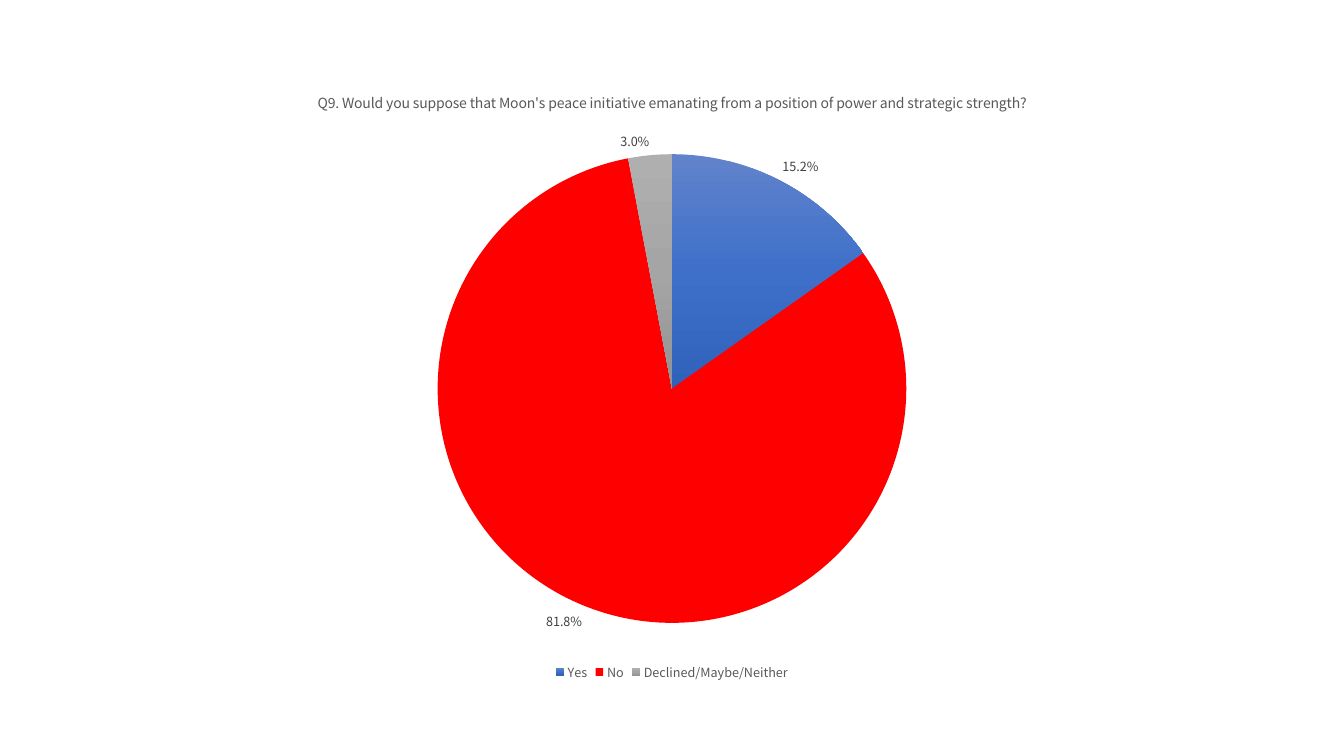
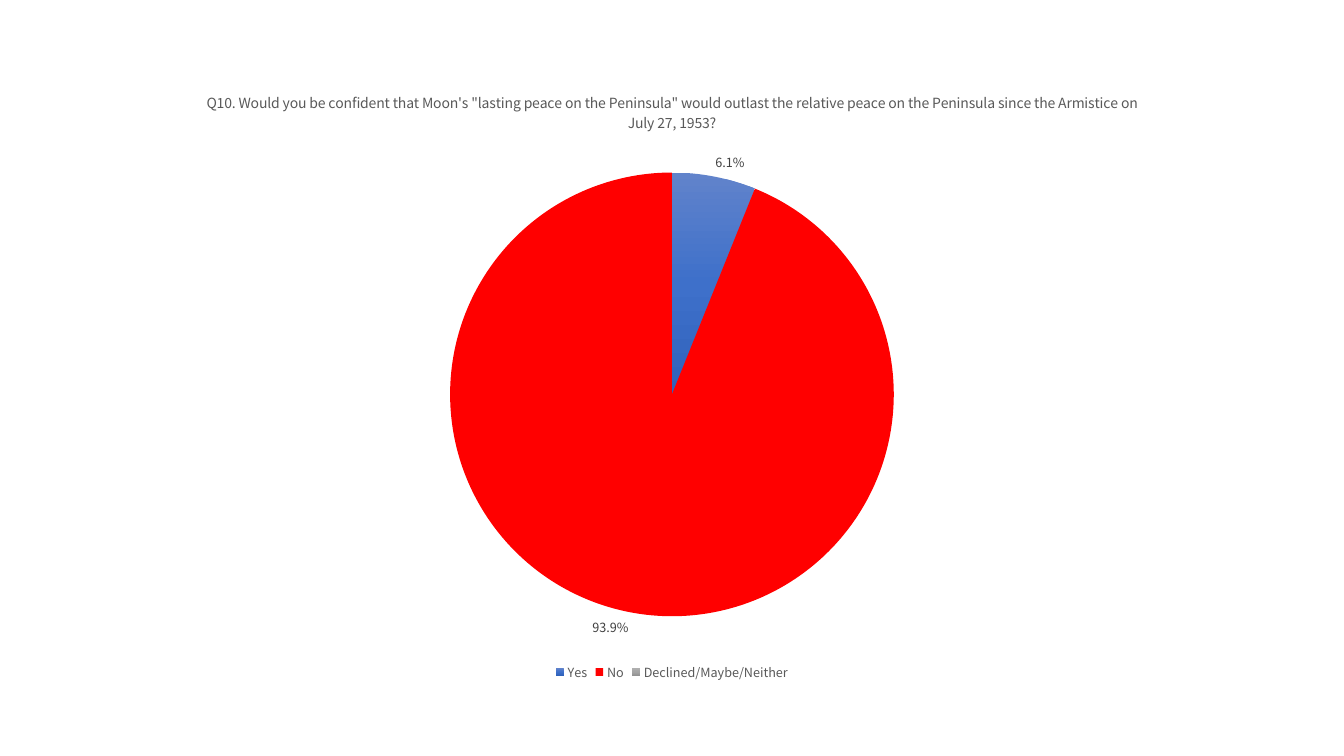
"""Build two survey slides, each with one pie chart."""
from copy import deepcopy
from dataclasses import dataclass

from lxml.etree import Element, SubElement
from pptx import Presentation
from pptx.chart.data import CategoryChartData as Data
from pptx.dml.color import RGBColor as Color
from pptx.enum.chart import XL_CHART_TYPE as Kind
from pptx.enum.chart import XL_LABEL_POSITION as Spot
from pptx.enum.chart import XL_LEGEND_POSITION as Side
from pptx.oxml.ns import qn
from pptx.util import Pt

WIDE, HIGH = 1344, 756
SCALE = 12192000 / WIDE


@dataclass(frozen=True)
class Theme:
    face: str = "Noto Sans CJK KR"
    base: str = "000000"
    text: str = "595959"
    label: str = "404040"
    head: int = 10
    small: int = 9
    fills: tuple = (
        ("6183CB", "3E70CA", "3062BB"),
        ("FF0000",),
        ("AFAFAF", "A5A5A5", "939393"),
    )


def px(num):
    return round(num * SCALE)


def style(font, size, color, face):
    font.size, font.name, font.bold = Pt(size), face, False
    font.color.rgb = Color.from_string(color)


def write(frame, text, **form):
    frame.text = text
    style(frame.paragraphs[0].runs[0].font, **form)


class Deck:
    def __init__(self, theme):
        self.theme = theme
        self.show = Presentation()
        self.show.slide_width, self.show.slide_height = px(WIDE), px(HIGH)
        self.slide = None

    def page(self):
        self.slide = self.show.slides.add_slide(self.show.slide_layouts[6])

    def form(self, size, color):
        return {"size": size, "color": color, "face": self.theme.face}

    def pie(self, title, names, vals, box):
        look = self.theme
        data = Data(number_format="0.0%")
        data.categories = names
        data.add_series(title, vals)
        chart = self.slide.shapes.add_chart(Kind.PIE, *map(px, box), data).chart
        style(chart.font, **self.form(look.head, look.base))
        chart.has_title = True
        write(chart.chart_title.text_frame, title,
              **self.form(look.head, look.text))
        self.legend(chart)
        for num, tones in enumerate(look.fills):
            self.slice(chart, num, tones)
        self.labels(chart, vals)

    def legend(self, chart):
        chart.has_legend = True
        key = chart.legend
        key.position, key.include_in_layout = Side.BOTTOM, False
        style(key.font, **self.form(self.theme.small, self.theme.text))

    def slice(self, chart, num, tones):
        part = chart.plots[0].series[0].points[num].format
        part.line.fill.background()
        fill = part.fill
        if len(tones) == 1:
            fill.solid()
            fill.fore_color.rgb = Color.from_string(tones[0])
            return
        fill.gradient()
        fill.gradient_angle = 270
        stops = chart.element.xpath(f"//c:dPt[c:idx/@val='{num}']//a:gsLst")[0]
        stops.append(deepcopy(stops[0]))
        for step, (stop, tone) in enumerate(zip(fill.gradient_stops, tones)):
            stop.position = step / (len(tones) - 1)
            stop.color.rgb = Color.from_string(tone)

    def labels(self, chart, vals):
        tags = chart.plots[0].series[0].data_labels
        tags.show_value, tags.position = True, Spot.OUTSIDE_END
        tags.number_format, tags.number_format_is_linked = "0.0%", False
        style(tags.font, **self.form(self.theme.small, self.theme.label))
        root = chart.element.xpath("//c:ser/c:dLbls")[0]
        empty = [num for num, val in enumerate(vals) if not val]
        for spot, num in enumerate(empty):
            tag = Element(qn("c:dLbl"))
            SubElement(tag, qn("c:idx"), val=str(num))
            SubElement(tag, qn("c:delete"), val="1")
            root.insert(spot, tag)


def main():
    names = ("Yes", "No", "Declined/Maybe/Neither")
    box = (71, 71, 1202, 614)
    polls = (
        ("Q9. Would you suppose that Moon's peace initiative emanating "
         "from a position of power and strategic strength?",
         (0.152, 0.818, 0.03)),
        ("Q10. Would you be confident that Moon's \"lasting peace on the "
         "Peninsula\" would outlast the relative peace on the Peninsula "
         "since the Armistice on July 27, 1953?",
         (0.061, 0.939, 0)),
    )
    deck = Deck(Theme())
    for title, vals in polls:
        deck.page()
        deck.pie(title, names, vals, box)
    deck.show.save("out.pptx")


if __name__ == "__main__":
    main()
